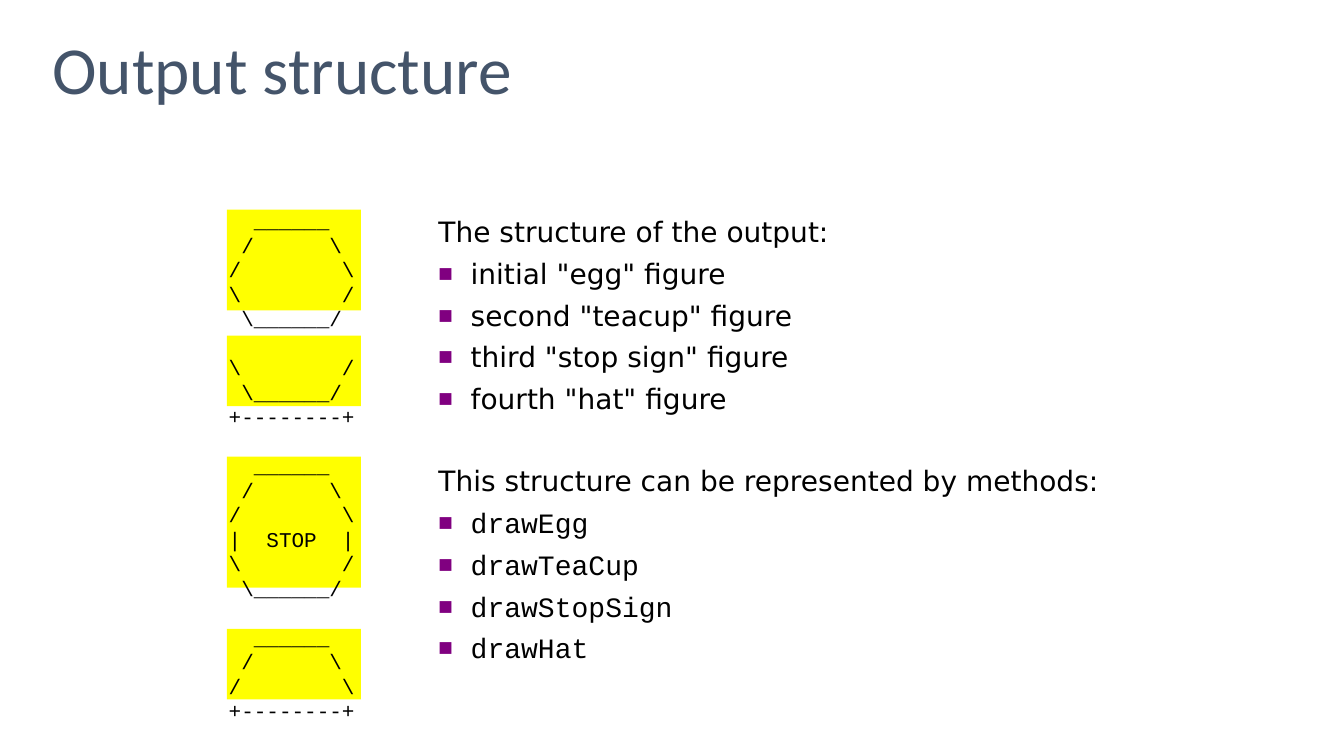
"""Build the "Output structure" slide: four text figures beside the methods that draw them."""
from dataclasses import dataclass

from lxml import etree
from pptx import Presentation
from pptx.dml.color import RGBColor
from pptx.enum.shapes import MSO_SHAPE as Shape
from pptx.enum.text import MSO_ANCHOR as Anchor
from pptx.oxml.ns import qn
from pptx.util import Inches, Pt

MONO, SANS = "Courier New", "DejaVu Sans"
ROW_POINTS = 17.5
LIST_GAP = 5.8
LIST_LINE = 29.0


@dataclass
class Figure:
    top: float
    height: float
    rows: list[str]


@dataclass
class Section:
    heading: str
    items: list[str]
    font: str


ROOF = ["  ______", " /      \\", "/        \\"]
BOWL = ["\\        /", " \\______/"]
BASE = ["+--------+"]

FIGURES = [
    Figure(2.08, 1.0, ROOF + BOWL),
    Figure(3.33, 0.7, BOWL + BASE),
    Figure(4.53, 1.3, ROOF + ["|  STOP  |"] + BOWL),
    Figure(6.24, 0.7, ROOF + BASE),
]
SECTIONS = [
    Section(
        "The structure of the output:",
        ['initial "egg" figure', 'second "teacup" figure',
         'third "stop sign" figure', 'fourth "hat" figure'],
        SANS,
    ),
    Section(
        "This structure can be represented by methods:",
        ["drawEgg", "drawTeaCup", "drawStopSign", "drawHat"],
        MONO,
    ),
]


def colour(value: str) -> RGBColor:
    return RGBColor.from_string(value)


def write(paragraph, text: str, *, font: str, size: float, fill: str = "000000",
          before: float = 0, spacing=None) -> None:
    run = paragraph.add_run()
    run.text = text
    run.font.name, run.font.size = font, Pt(size)
    run.font.color.rgb = colour(fill)
    paragraph.space_before = Pt(before)
    paragraph.line_spacing = spacing


def add_bullet(paragraph) -> None:
    properties = paragraph._p.get_or_add_pPr()
    properties.set("marL", str(Inches(0.32)))
    properties.set("indent", str(-Inches(0.32)))
    bullet_colour = etree.SubElement(properties, qn("a:buClr"))
    etree.SubElement(bullet_colour, qn("a:srgbClr"), val="800080")
    etree.SubElement(properties, qn("a:buSzPct"), val="55000")
    etree.SubElement(properties, qn("a:buFont"), typeface=SANS)
    etree.SubElement(properties, qn("a:buChar"), char="■")


def add_text_frame(slide, left: float, top: float, width: float, height: float):
    frame = slide.shapes.add_textbox(
        Inches(left), Inches(top), Inches(width), Inches(height)).text_frame
    frame.word_wrap = True
    return frame


def next_paragraph(frame):
    first = frame.paragraphs[0]
    return frame.add_paragraph() if first.runs else first


def add_title(slide) -> None:
    title = slide.shapes.title
    title.left, title.top = Inches(0.42), Inches(0)
    title.width, title.height = Inches(12.5), Inches(1.45)
    frame = title.text_frame
    frame.vertical_anchor = Anchor.MIDDLE
    paragraph = frame.paragraphs[0]
    write(paragraph, "Output structure", font="Calibri", size=48,
          fill="44546A", spacing=0.9)
    paragraph.alignment = 1


def add_highlight(slide, figure: Figure) -> None:
    shape = slide.shapes.add_shape(
        Shape.RECTANGLE, Inches(2.25), Inches(figure.top),
        Inches(1.33), Inches(figure.height))
    shape.shadow.inherit = False
    shape.fill.solid()
    shape.fill.fore_color.rgb = colour("FFFF00")
    shape.line.fill.background()


def add_figures(slide, figures: list[Figure]) -> None:
    for figure in figures:
        add_highlight(slide, figure)
    frame = add_text_frame(slide, 2.17, 2.02, 2.0, 5.2)
    for number, figure in enumerate(figures):
        for index, row in enumerate(figure.rows):
            gap = ROW_POINTS if number and index == 0 else 0
            write(next_paragraph(frame), row, font=MONO, size=15,
                  before=gap, spacing=Pt(ROW_POINTS))


def add_sections(slide, sections: list[Section]) -> None:
    frame = add_text_frame(slide, 4.25, 2.08, 7.08, 4.46)
    for number, section in enumerate(sections):
        write(next_paragraph(frame), section.heading, font=SANS, size=20,
              before=LIST_GAP + number * LIST_LINE)
        for item in section.items:
            paragraph = next_paragraph(frame)
            write(paragraph, item, font=section.font, size=20, before=LIST_GAP)
            add_bullet(paragraph)


def main() -> None:
    presentation = Presentation()
    presentation.slide_width, presentation.slide_height = Inches(13.33), Inches(7.5)
    slide = presentation.slides.add_slide(presentation.slide_layouts[5])
    add_title(slide)
    add_figures(slide, FIGURES)
    add_sections(slide, SECTIONS)
    presentation.save("out.pptx")


if __name__ == "__main__":
    main()
